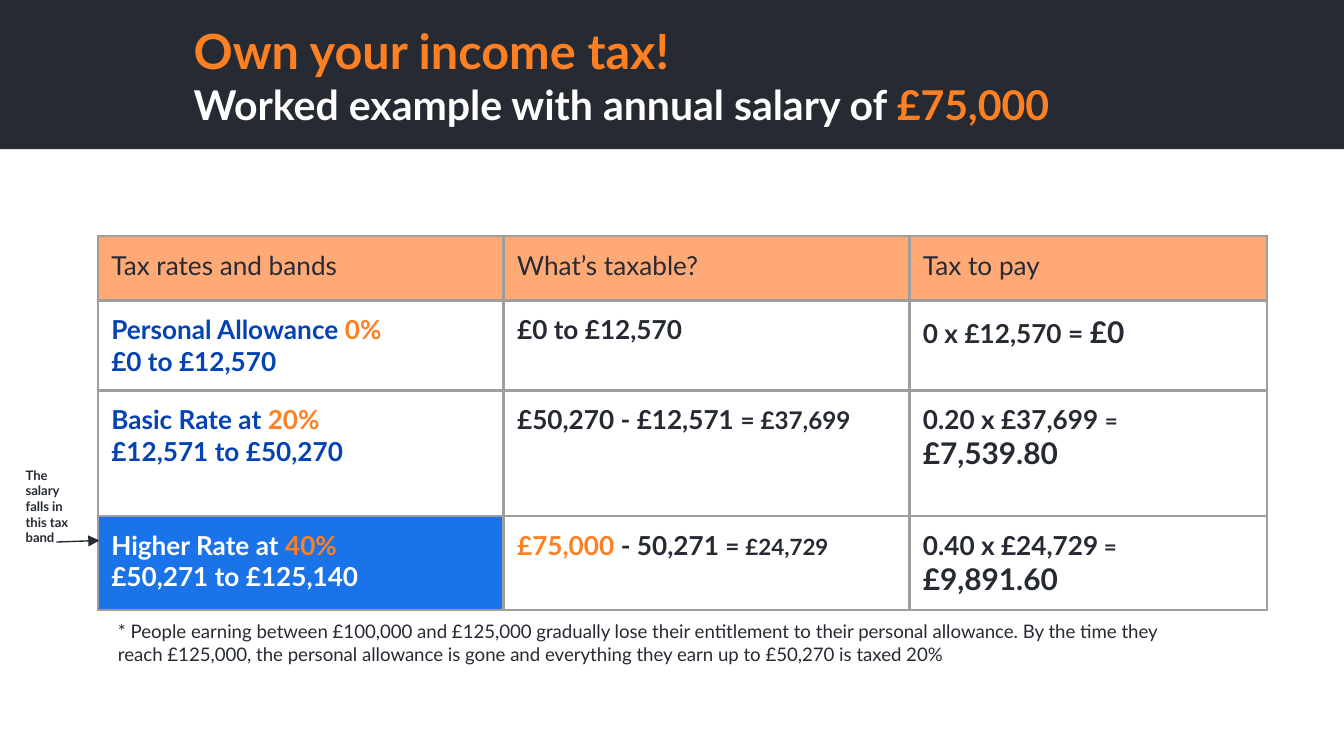
from lxml.etree import SubElement
from pptx import Presentation
from pptx.dml.color import RGBColor
from pptx.enum.shapes import MSO_CONNECTOR, MSO_SHAPE
from pptx.enum.text import MSO_ANCHOR, MSO_AUTO_SIZE, PP_ALIGN
from pptx.oxml.ns import qn
from pptx.util import Inches, Pt

FONT = "Lato"
WIDTH = Inches(10)
HEIGHT = WIDTH * 9 // 16
INSET = Inches(0.1)

DARK = RGBColor(0x26, 0x2A, 0x33)
ORANGE = RGBColor(0xFF, 0x80, 0x22)
PEACH = RGBColor(0xFF, 0xA9, 0x76)
NAVY = RGBColor(0x05, 0x43, 0xB3)
BLUE = RGBColor(0x1A, 0x73, 0xE8)
GREY = RGBColor(0x9E, 0x9E, 0x9E)
WHITE = RGBColor(0xFF, 0xFF, 0xFF)

COLUMNS = (30.2, 30.2, 26.6)  # percent of slide width
ROWS = (8.5, 11.9, 16.6, 12.4)  # percent of slide height


def across(percent):
    return int(WIDTH * percent / 100)


def down(percent):
    return int(HEIGHT * percent / 100)


def area(x, y, w, h):
    """Turn percentages of the slide into left, top, width, height."""
    return across(x), down(y), across(w), down(h)


def run(text, size=14, color=DARK, bold=True):
    return text, size, color, bold


def write(tf, paragraphs):
    """Fill a text frame; each paragraph is a list of runs."""
    for i, runs in enumerate(paragraphs):
        p = tf.paragraphs[0] if i == 0 else tf.add_paragraph()
        p.alignment = PP_ALIGN.LEFT
        for text, size, color, bold in runs:
            r = p.add_run()
            r.text = text
            r.font.name = FONT
            r.font.size = Pt(size)
            r.font.bold = bold
            r.font.color.rgb = color


def set_insets(frame):
    frame.margin_left = frame.margin_right = INSET
    frame.margin_top = frame.margin_bottom = INSET


def add_header(s):
    title = s.shapes.title
    title.left, title.top, title.width, title.height = area(13.4, 4.9, 69, 10)
    tf = title.text_frame
    set_insets(tf)
    tf.word_wrap = True
    tf.auto_size = MSO_AUTO_SIZE.NONE
    tf.vertical_anchor = MSO_ANCHOR.MIDDLE
    write(tf, [
        [run("Own your income tax!", 26, ORANGE)],
        [run("Worked example with annual salary of ", 22, WHITE),
         run("£75,000", 22, ORANGE)],
    ])
    band = s.shapes.add_shape(MSO_SHAPE.RECTANGLE, *area(0, 0, 100, 19.75))
    band.shadow.inherit = False
    band.fill.solid()
    band.fill.fore_color.rgb = DARK
    band.line.fill.background()
    title.element.addprevious(band.element)


def add_text(s, place, text, size, bold=False):
    tf = s.shapes.add_textbox(*place).text_frame
    set_insets(tf)
    tf.word_wrap = True
    tf.auto_size = MSO_AUTO_SIZE.SHAPE_TO_FIT_TEXT
    write(tf, [[run(text, size, DARK, bold)]])


def add_borders(cell):
    tc_pr = cell._tc.get_or_add_tcPr()
    for i, side in enumerate(("lnL", "lnR", "lnT", "lnB")):
        ln = tc_pr.makeelement(qn(f"a:{side}"), {"w": str(Pt(1.5))})
        fill = SubElement(ln, qn("a:solidFill"))
        SubElement(fill, qn("a:srgbClr"), val=str(GREY))
        tc_pr.insert(i, ln)


def rate_band(name, rate, limits, color=NAVY):
    return [[run(name, color=color), run(rate, color=ORANGE)],
            [run(limits, color=color)]]


def tax_rows():
    headings = ("Tax rates and bands", "What’s taxable?", "Tax to pay")
    return [
        [[[run(h, bold=False)]] for h in headings],
        [rate_band("Personal Allowance ", "0%", "£0 to £12,570"),
         [[run("£0 to £12,570")]],
         [[run("0 x £12,570 = "), run("£0", 16)]]],
        [rate_band("Basic Rate at ", "20%", "£12,571 to £50,270"),
         [[run("£50,270 - £12,571 "), run("= £37,699", 13)]],
         [[run("0.20 x £37,699 "), run("= ", 12), run("£7,539.80", 16)]]],
        [rate_band("Higher Rate at ", "40%", "£50,271 to £125,140", WHITE),
         [[run("£75,000", color=ORANGE), run(" - 50,271 "),
           run("= ", 13), run("£24,729", 12)]],
         [[run("0.40 x £24,729"), run(" = ", 12), run("£9,891.60", 16)]]],
    ]


def add_tax_table(s):
    place = area(7.28, 31.25, sum(COLUMNS), sum(ROWS))
    table = s.shapes.add_table(len(ROWS), len(COLUMNS), *place).table
    table.first_row = table.horz_banding = False
    for column, width in zip(table.columns, COLUMNS):
        column.width = across(width)
    for row, height in zip(table.rows, ROWS):
        row.height = down(height)
    last = len(ROWS) - 1
    for i, row in enumerate(tax_rows()):
        for j, paragraphs in enumerate(row):
            cell = table.cell(i, j)
            set_insets(cell)
            write(cell.text_frame, paragraphs)
            if i == 0 or (i, j) == (last, 0):
                cell.fill.solid()
                cell.fill.fore_color.rgb = PEACH if i == 0 else BLUE
            else:
                cell.fill.background()
            add_borders(cell)


def add_arrow(s, x1, y1, x2, y2):
    line = s.shapes.add_connector(MSO_CONNECTOR.STRAIGHT, across(x1), down(y1),
                                  across(x2), down(y2))
    line.line.color.rgb = DARK
    line.line.width = Pt(0.75)
    SubElement(line.line._get_or_add_ln(), qn("a:tailEnd"), type="triangle")
    SubElement(line.element.spPr, qn("a:effectLst"))


def main():
    prs = Presentation()
    prs.slide_width, prs.slide_height = WIDTH, HEIGHT
    s = prs.slides.add_slide(prs.slide_layouts[5])
    add_header(s)
    add_tax_table(s)
    add_text(s, area(0.93, 60, 5.7, 14),
             "The salary falls in this tax band", 7, bold=True)
    add_arrow(s, 4.2, 71.7, 7.4, 71.5)
    add_text(s, area(7.8, 80.25, 80.3, 9.6),
             "* People earning between £100,000 and £125,000 gradually lose "
             "their entitlement to their personal allowance. By the time they "
             "reach £125,000, the personal allowance is gone and everything "
             "they earn up to £50,270 is taxed 20%", 10)
    prs.save("out.pptx")


if __name__ == "__main__":
    main()
